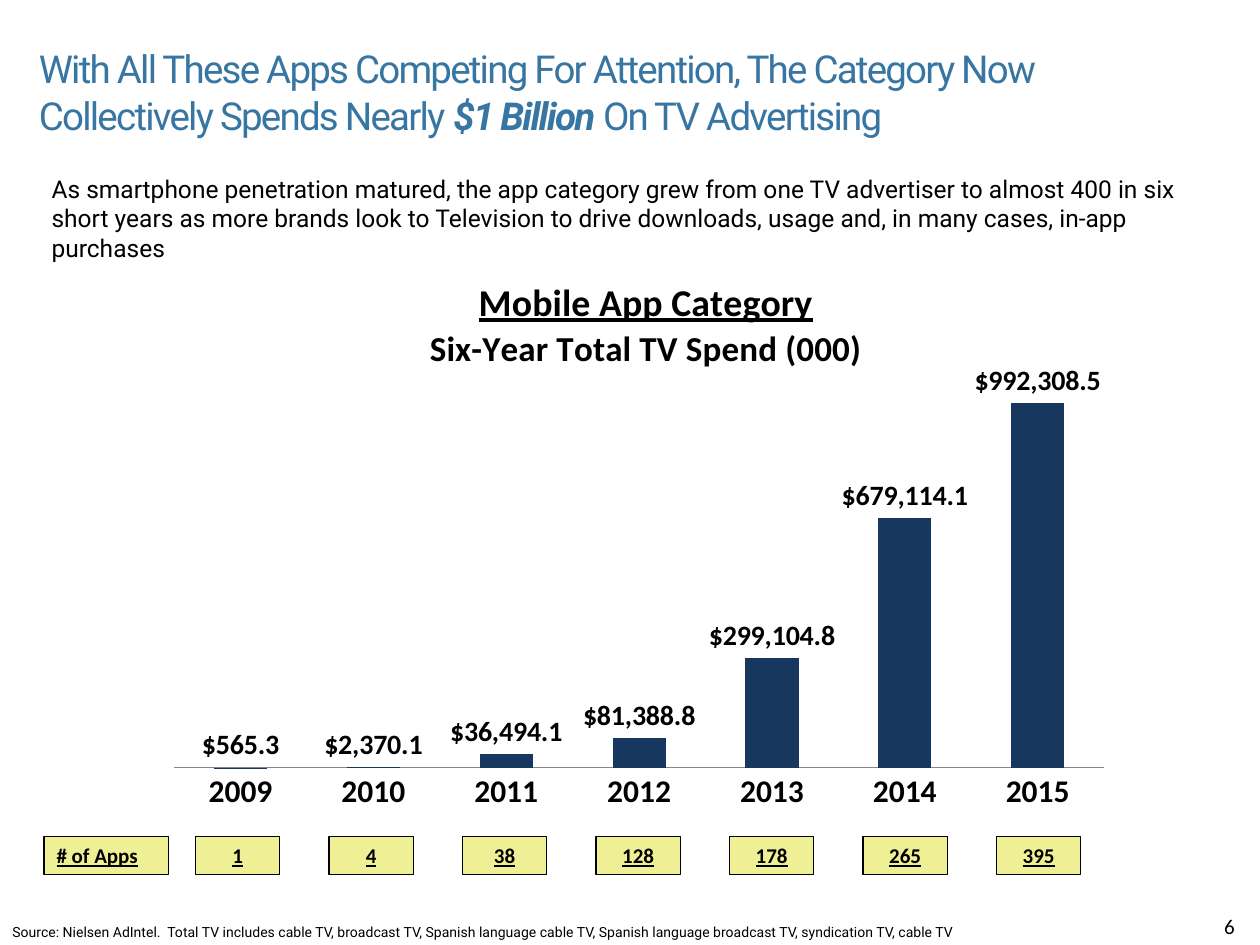
import dataclasses

import pptx
import pptx.chart.data
import pptx.dml.color
import pptx.enum.chart
import pptx.enum.shapes
import pptx.enum.text
import pptx.oxml
import pptx.oxml.ns
import pptx.util

Cm = pptx.util.Cm
Pt = pptx.util.Pt
ALIGN = pptx.enum.text.PP_ALIGN
ANCHOR = pptx.enum.text.MSO_ANCHOR
AUTO_SIZE = pptx.enum.text.MSO_AUTO_SIZE


@dataclasses.dataclass(frozen=True)
class Theme:
    """Colours, fonts and type sizes of the slide."""
    ink: str = "000000"
    headline: str = "3775A2"
    bar: str = "17375E"
    axis: str = "868686"
    badge: str = "EFEF96"
    text_font: str = "Roboto"
    data_font: str = "Calibri"
    headline_size: float = 22
    intro_size: float = 14
    source_size: float = 8
    badge_size: float = 12
    chart_title_size: float = 21.6
    chart_subtitle_size: float = 20
    axis_size: float = 18
    label_size: float = 16


THEME = Theme()
SPEND = {"2009": 565.3, "2010": 2370.1, "2011": 36494.1, "2012": 81388.8,
         "2013": 299104.8, "2014": 679114.1, "2015": 992308.5}
APP_COUNTS = [1, 4, 38, 128, 178, 265, 395]
DOLLARS = '"$"#,##0.0'


def rgb(value):
    """Return a colour object for a hex string."""
    return pptx.dml.color.RGBColor.from_string(value)


def style_font(font, size, family=THEME.text_font, color=THEME.ink,
               bold=False, italic=False, underline=False):
    """Apply a complete format to a font."""
    font.size, font.name = Pt(size), family
    font.bold, font.italic, font.underline = bold, italic, underline
    font.color.rgb = rgb(color)


def write(paragraph, text, align=ALIGN.LEFT, tracking=None, **style):
    """Append formatted text to a paragraph."""
    paragraph.alignment = align
    run = paragraph.add_run()
    run.text = text
    style_font(run.font, **style)
    if tracking is not None:
        run._r.get_or_add_rPr().set("spc", str(tracking))


def add_headline(slide, box):
    """Place the slide title with its emphasised amount."""
    title = slide.shapes.title
    title.left, title.top, title.width, title.height = map(Cm, box)
    frame = title.text_frame
    frame.word_wrap, frame.auto_size = True, AUTO_SIZE.NONE
    frame.vertical_anchor = ANCHOR.MIDDLE
    parts = [("With All These Apps Competing For Attention, The Category Now "
              "Collectively Spends Nearly ", False),
             ("$1 Billion ", True), ("On TV Advertising", False)]
    for text, strong in parts:
        write(frame.paragraphs[0], text, size=THEME.headline_size,
              color=THEME.headline, bold=strong, italic=strong, tracking=-100)


def add_note(slide, box, text, **style):
    """Place a wrapped text box."""
    frame = slide.shapes.add_textbox(*map(Cm, box)).text_frame
    frame.word_wrap, frame.auto_size = True, AUTO_SIZE.SHAPE_TO_FIT_TEXT
    write(frame.paragraphs[0], text, **style)


def set_layout(element, **fractions):
    """Give a chart part a fixed place as fractions of the chart."""
    layout = element.find(pptx.oxml.ns.qn("c:layout"))
    if layout is not None:
        element.remove(layout)
    target = '<c:layoutTarget val="inner"/>' if "w" in fractions else ""
    modes = "".join(f'<c:{axis}Mode val="edge"/>' for axis in "xy")
    sizes = "".join(f'<c:{key} val="{value}"/>' for key, value in fractions.items())
    layout = pptx.oxml.parse_xml(
        f'<c:layout {pptx.oxml.ns.nsdecls("c")}><c:manualLayout>'
        f'{target}{modes}{sizes}</c:manualLayout></c:layout>')
    position = 0 if "w" in fractions else 1
    element.insert(position, layout)


def add_spend_chart(slide, box):
    """Place the column chart of yearly TV spend."""
    data = pptx.chart.data.CategoryChartData(number_format=DOLLARS)
    data.categories = list(SPEND)
    data.add_series("Series 1", list(SPEND.values()))
    chart = slide.shapes.add_chart(
        pptx.enum.chart.XL_CHART_TYPE.COLUMN_CLUSTERED, *map(Cm, box), data).chart
    chart.has_legend = False
    style_font(chart.font, THEME.axis_size, THEME.data_font)

    title = chart.chart_title
    frame = title.text_frame
    write(frame.paragraphs[0], "Mobile App Category", align=ALIGN.CENTER,
          size=THEME.chart_title_size, family=THEME.data_font, bold=True, underline=True)
    write(frame.add_paragraph(), "Six-Year Total TV Spend (000)", align=ALIGN.CENTER,
          size=THEME.chart_subtitle_size, family=THEME.data_font, bold=True)
    title.include_in_layout = False
    set_layout(title._element, x=0.28, y=0.13)

    ticks = pptx.enum.chart.XL_TICK_MARK.NONE
    years, dollars = chart.category_axis, chart.value_axis
    years.major_tick_mark = ticks
    years.format.line.color.rgb = rgb(THEME.axis)
    style_font(years.tick_labels.font, THEME.axis_size, THEME.data_font, bold=True)
    dollars.minimum_scale, dollars.maximum_scale = 0, 1200000
    dollars.has_major_gridlines = False
    dollars.visible = False

    plot = chart.plots[0]
    plot.gap_width, plot.overlap, plot.vary_by_categories = 150, -25, False
    spend = plot.series[0]
    spend.format.fill.solid()
    spend.format.fill.fore_color.rgb = rgb(THEME.bar)
    labels = spend.data_labels
    labels.show_value = True
    labels.number_format, labels.number_format_is_linked = DOLLARS, False
    labels.position = pptx.enum.chart.XL_LABEL_POSITION.OUTSIDE_END
    style_font(labels.font, THEME.label_size, THEME.data_font, bold=True)
    plot_area = chart._chartSpace.chart.plotArea
    set_layout(plot_area, x=0.02, y=0.215, w=0.96, h=0.7)


def add_badge(slide, box, text, align):
    """Place one yellow box with underlined text."""
    badge = slide.shapes.add_shape(
        pptx.enum.shapes.MSO_SHAPE.RECTANGLE, *map(Cm, box))
    badge.shadow.inherit = False
    badge.fill.solid()
    badge.fill.fore_color.rgb = rgb(THEME.badge)
    badge.line.color.rgb, badge.line.width = rgb(THEME.ink), Pt(0.75)
    frame = badge.text_frame
    frame.word_wrap, frame.auto_size = True, AUTO_SIZE.SHAPE_TO_FIT_TEXT
    frame.vertical_anchor = ANCHOR.TOP
    write(frame.paragraphs[0], text, align=align, size=THEME.badge_size,
          family=THEME.data_font, bold=True, underline=True)


def add_app_counts(slide, box):
    """Place the row of app counts under the chart's years."""
    left, top, width, height = box
    heading_width, count_width, gap = 2.51, 1.7, 0.54
    add_badge(slide, (left, top, heading_width, height), "# of Apps", ALIGN.LEFT)
    pitch = (width - heading_width - gap - count_width) / (len(APP_COUNTS) - 1)
    for index, count in enumerate(APP_COUNTS):
        count_left = left + heading_width + gap + index * pitch
        add_badge(slide, (count_left, top, count_width, height), str(count), ALIGN.CENTER)


def main():
    """Build and save the slide."""
    deck = pptx.Presentation()
    deck.slide_width, deck.slide_height = Cm(25.4), Cm(19.05)
    slide = deck.slides.add_slide(deck.slide_layouts[5])
    add_note(slide, (0, 18.49, 25.4, 0.61),
             "Source: Nielsen AdIntel.\u00a0 Total TV includes cable TV, broadcast TV, "
             "Spanish language cable TV, Spanish language broadcast TV, "
             "syndication TV, cable TV".replace("\u00a0", " "),
             size=THEME.source_size)
    add_headline(slide, (0.53, 0.64, 21.67, 2.41))
    add_note(slide, (0.79, 3.38, 23.37, 2.06),
             "As smartphone penetration matured, the app category grew from one TV "
             "advertiser to almost 400 in six short years as more brands look to "
             "Television to drive downloads, usage and, in many cases, in-app purchases",
             size=THEME.intro_size)
    add_spend_chart(slide, (3.12, 3.86, 19.53, 12.7))
    add_app_counts(slide, (0.89, 16.87, 20.9, 0.76))
    add_note(slide, (24.43, 18.29, 0.97, 0.76), "6",
             size=THEME.badge_size, family=THEME.data_font)
    deck.save("out.pptx")


if __name__ == "__main__":
    main()
